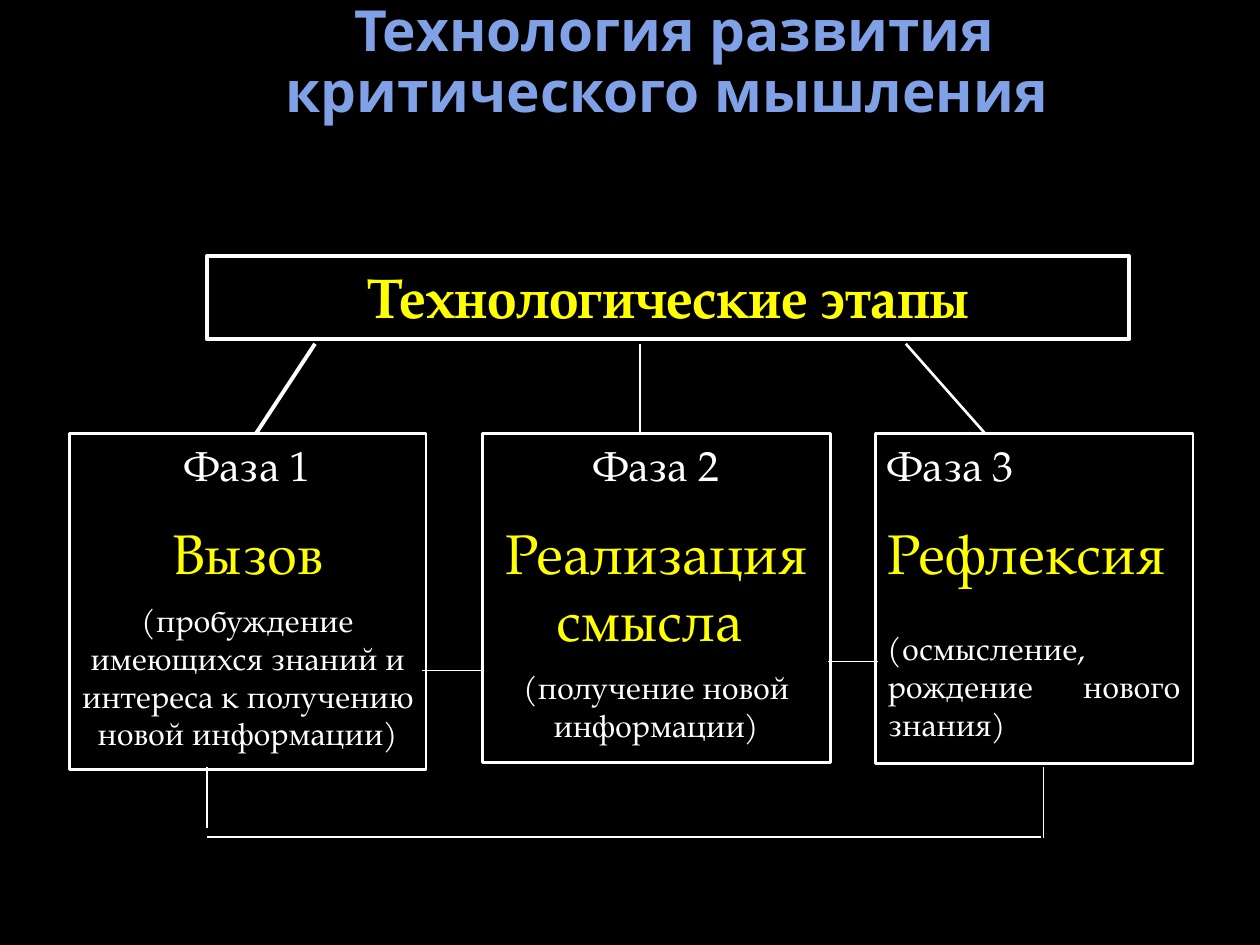
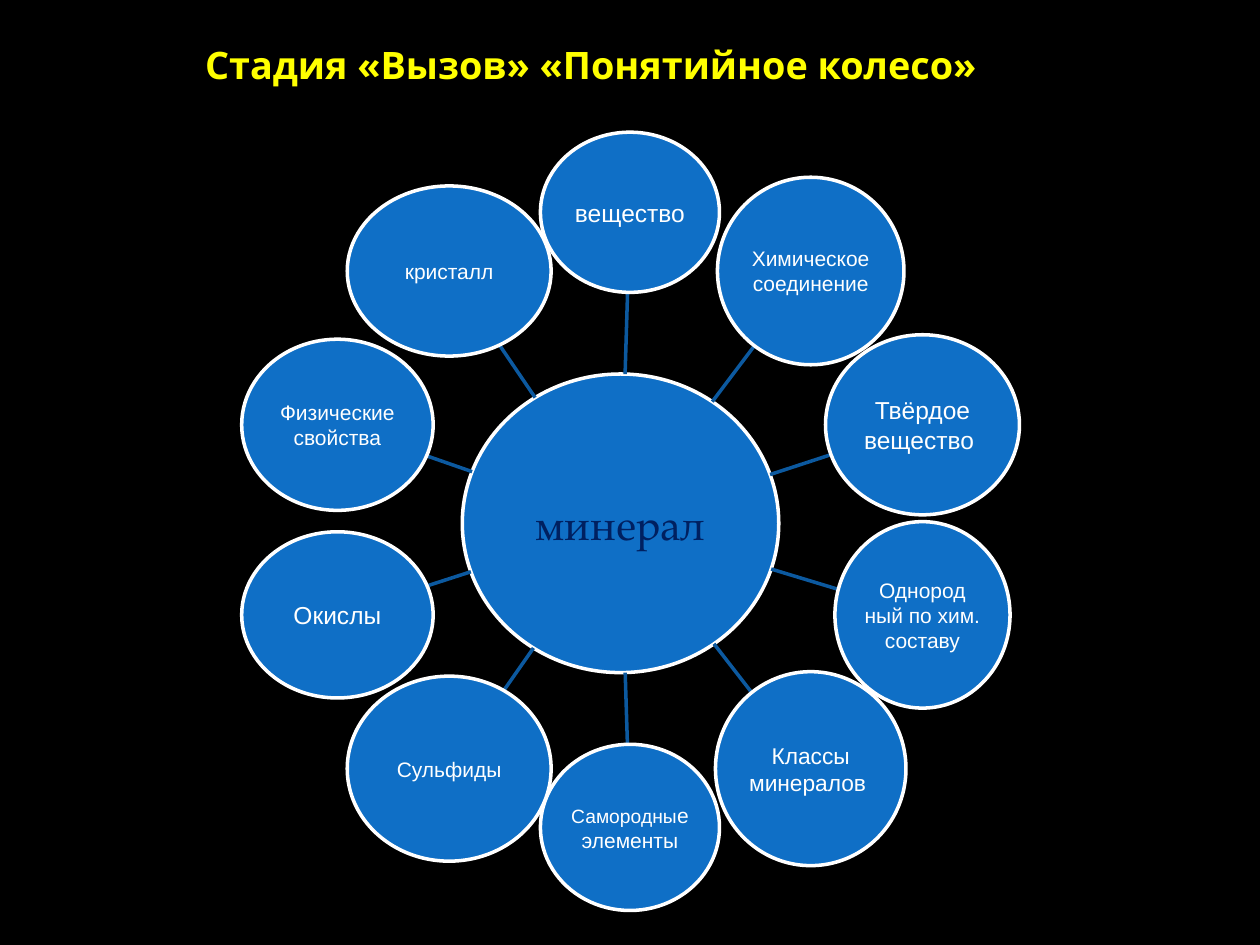
from dataclasses import dataclass
from math import cos, hypot, radians, sin

from lxml.etree import SubElement
from pptx import Presentation
from pptx.dml.color import RGBColor as Rgb
from pptx.enum.shapes import MSO_CONNECTOR as Connector, MSO_SHAPE as Shape
from pptx.enum.text import MSO_ANCHOR as Anchor, MSO_AUTO_SIZE as AutoSize, PP_ALIGN as Align
from pptx.oxml.ns import qn
from pptx.util import Cm, Pt


@dataclass(frozen=True)
class Theme:
    background: str = "000000"
    title: str = "81A1E7"
    accent: str = "FFFF00"
    light: str = "FFFFFF"
    bubble: str = "0F6FC6"
    spoke: str = "0C599F"
    hub_text: str = "002060"
    title_font: str = "Open Sans"
    serif: str = "TeX Gyre Pagella"
    sans: str = "Arial"
    main_title_size: float = 32.4
    stage_title_size: float = 21.6
    heading_size: int = 32
    phase_size: int = 24
    note_size: int = 18


THEME = Theme()


@dataclass
class Ellipse:
    x: float
    y: float
    width: float
    height: float

    def edge_towards(self, other):
        """Point where the line to the other centre leaves this ellipse."""
        dx, dy = other.x - self.x, other.y - self.y
        scale = 1 / hypot(dx / (self.width / 2), dy / (self.height / 2))
        return self.x + dx * scale, self.y + dy * scale


# Phase boxes: left, width, height, then (text, alignment, space before) by row
PHASES = [
    (1.4, 7.19, 6.78, [
        ("Фаза 1", Align.CENTER, 12),
        ("Вызов", Align.CENTER, 16),
        ("(пробуждение имеющихся знаний и интереса к получению новой информации)",
         Align.CENTER, 9)]),
    (9.73, 7.01, 6.63, [
        ("Фаза 2", Align.CENTER, 12),
        ("Реализация смысла ", Align.CENTER, 16),
        ("(получение новой информации)", Align.CENTER, 9)]),
    (17.65, 6.4, 6.65, [
        ("Фаза 3", Align.LEFT, 12),
        ("Рефлексия", Align.LEFT, 16),
        ("(осмысление, рождение нового знания)", Align.JUSTIFY, 25)]),
]
HEADER_BOTTOM, PHASE_TOP = 6.93, 8.74
LINKS = [
    ((6.35, HEADER_BOTTOM), (5.16, PHASE_TOP), 2.25),
    ((12.9, HEADER_BOTTOM), (12.9, PHASE_TOP), 1.5),
    ((18.26, HEADER_BOTTOM), (19.86, PHASE_TOP), 1.5),
    ((8.51, 13.51), (9.7, 13.51), 0.75),
    ((16.69, 13.34), (17.7, 13.34), 0.75),
    ((4.17, 15.47), (4.17, 16.69), 0.75),
    ((4.17, 16.87), (20.98, 16.87), 0.75),
    ((21.03, 16.89), (21.03, 15.47), 0.75),
]

# Concepts clockwise from the top: width, height, paragraphs of (text, size) runs
CONCEPTS = [
    (3.61, 3.23, [[("вещество", 14)]]),
    (3.76, 3.78, [[("Химическое", 12)], [("соединение", 12)]]),
    (3.91, 3.63, [[("Твёрдое вещество ", 14)]]),
    (3.53, 3.76, [[("Однород", 12)], [("ный по хим. составу", 12)]]),
    (3.84, 3.91, [[("Классы", 13)], [("минералов ", 13)]]),
    (3.61, 3.35, [[("Самородны", 11), ("е элементы", 12)]]),
    (4.11, 3.73, [[("Сульфиды", 12)]]),
    (3.86, 3.35, [[("Окислы", 14)]]),
    (3.86, 3.45, [[("Физические свойства", 12)]]),
    (4.11, 3.43, [[("кристалл", 12)]]),
]
HUB = Ellipse(12.51, 10.55, 6.38, 6.02)
RING_X, RING_Y, RING_RADIUS = 12.7, 10.48, 6.2


def add_run(paragraph, text, font, size, color, bold=False):
    run = paragraph.add_run()
    run.text = text
    run.font.name = font
    run.font.size = Pt(size)
    run.font.bold = bold
    run.font.color.rgb = Rgb.from_string(color)


def paragraphs_of(frame, count):
    return [frame.paragraphs[0]] + [frame.add_paragraph() for _ in range(count - 1)]


def add_titled_slide(deck, text, box, size, color, left_inset=0.25):
    slide = deck.slides.add_slide(deck.slide_layouts[5])
    title = slide.shapes.title
    title.left, title.top, title.width, title.height = map(Cm, box)
    frame = title.text_frame
    frame.word_wrap = True
    frame.auto_size = AutoSize.NONE
    frame.vertical_anchor = Anchor.TOP
    frame.margin_left, frame.margin_right = Cm(left_inset), Cm(0.25)
    frame.margin_top = Cm(0.05)
    heading = frame.paragraphs[0]
    heading.alignment = Align.CENTER
    heading.line_spacing = 0.9
    add_run(heading, text, THEME.title_font, size, color, bold=True)
    return slide


def add_outlined(slide, kind, box, line_width, fill=None):
    shape = slide.shapes.add_shape(kind, *map(Cm, box))
    shape.shadow.inherit = False
    if fill:
        shape.fill.solid()
        shape.fill.fore_color.rgb = Rgb.from_string(fill)
    else:
        shape.fill.background()
    shape.line.color.rgb = Rgb.from_string(THEME.light)
    shape.line.width = Pt(line_width)
    shape.text_frame.word_wrap = True
    return shape


def add_line(slide, start, end, color, width):
    line = slide.shapes.add_connector(Connector.STRAIGHT, *map(Cm, (*start, *end)))
    line.line.color.rgb = Rgb.from_string(color)
    line.line.width = Pt(width)
    SubElement(line._element.spPr, qn("a:effectLst"))


def add_header(slide, text):
    frame = add_outlined(slide, Shape.RECTANGLE, (4.17, 5.16, 18.59, 1.68), 2.25).text_frame
    frame.vertical_anchor = Anchor.TOP
    frame.paragraphs[0].alignment = Align.CENTER
    add_run(frame.paragraphs[0], text, THEME.serif, THEME.heading_size, THEME.accent, bold=True)


def add_phase(slide, left, width, height, rows):
    frame = add_outlined(slide, Shape.RECTANGLE, (left, PHASE_TOP, width, height), 1.5).text_frame
    frame.vertical_anchor = Anchor.TOP
    styles = [(THEME.phase_size, THEME.light), (THEME.heading_size, THEME.accent),
              (THEME.note_size, THEME.light)]
    for paragraph, row, style in zip(paragraphs_of(frame, len(rows)), rows, styles):
        text, paragraph.alignment, gap = row
        paragraph.space_before = Pt(gap)
        add_run(paragraph, text, THEME.serif, *style)


def add_bubble(slide, place, label, font, color):
    box = (place.x - place.width / 2, place.y - place.height / 2, place.width, place.height)
    frame = add_outlined(slide, Shape.OVAL, box, 2, THEME.bubble).text_frame
    frame.vertical_anchor = Anchor.MIDDLE
    frame.margin_left = frame.margin_right = frame.margin_top = frame.margin_bottom = Cm(0.03)
    for paragraph, runs in zip(paragraphs_of(frame, len(label)), label):
        paragraph.alignment = Align.CENTER
        for text, size in runs:
            add_run(paragraph, text, font, size, color)


def add_concept_wheel(slide):
    add_bubble(slide, HUB, [[("минерал", 24)]], THEME.serif, THEME.hub_text)
    for index, (width, height, label) in enumerate(CONCEPTS):
        angle = radians(index * 360 / len(CONCEPTS))
        place = Ellipse(RING_X + RING_RADIUS * sin(angle),
                        RING_Y - RING_RADIUS * cos(angle), width, height)
        add_line(slide, HUB.edge_towards(place), place.edge_towards(HUB), THEME.spoke, 2)
        add_bubble(slide, place, label, THEME.sans, THEME.light)


def main():
    deck = Presentation()
    deck.slide_width, deck.slide_height = Cm(25.4), Cm(19.05)
    backdrop = deck.slide_master.background.fill
    backdrop.solid()
    backdrop.fore_color.rgb = Rgb.from_string(THEME.background)

    stages = add_titled_slide(deck, "Технология развития критического мышления ",
                              (2.77, 0, 21.64, 3.58), THEME.main_title_size, THEME.title)
    add_header(stages, "Технологические этапы")
    for phase in PHASES:
        add_phase(stages, *phase)
    for start, end, width in LINKS:
        add_line(stages, start, end, THEME.light, width)

    wheel = add_titled_slide(deck, "Стадия «Вызов» «Понятийное колесо»",
                             (1.27, 0.89, 20.12, 1.88), THEME.stage_title_size,
                             THEME.accent, left_inset=1.42)
    add_concept_wheel(wheel)
    deck.save("out.pptx")


if __name__ == "__main__":
    main()
